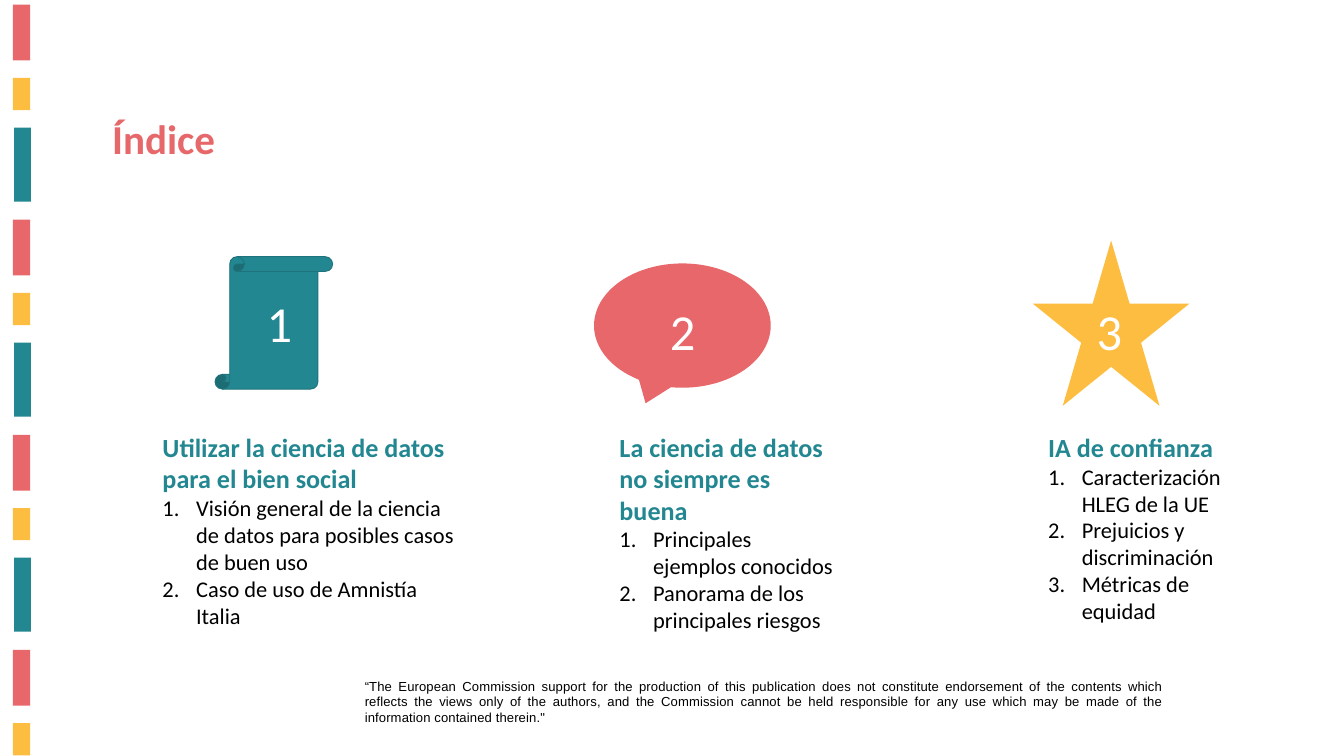
from dataclasses import dataclass

from lxml import etree
from pptx import Presentation
from pptx import util as u
from pptx.dml.color import RGBColor
from pptx.enum import shapes, text
from pptx.oxml.ns import qn

PX = u.Inches(1) // 100  # 100 px to the inch
HUES = {
    "red": "E8676A",
    "title": "E7686A",
    "gold": "FDBD40",
    "teal": "238791",
    "edge": "1E737C",
    "white": "FFFFFF",
    "black": "000000",
}
NOTE = (
    "“The European Commission support for the production of this publication "
    "does not constitute endorsement of the contents which reflects the views "
    "only of the authors, and the Commission cannot be held responsible for any "
    "use which may be made of the information contained therein.\""
)


@dataclass(frozen=True)
class Box:
    left: int
    top: int
    width: int
    height: int

    def emu(self) -> list[int]:
        return [n * PX for n in (self.left, self.top, self.width, self.height)]


@dataclass(frozen=True)
class Stripe:
    box: Box
    hue: str


@dataclass(frozen=True)
class Topic:
    label: str
    kind: shapes.MSO_SHAPE
    hue: str
    edge: str | None
    icon: Box
    digit: Box
    body: Box
    head: str
    items: tuple[str, ...]


STEP = 320
BAND = (
    Stripe(Box(19, 7, 26, 83), "red"),
    Stripe(Box(19, 116, 26, 48), "gold"),
    Stripe(Box(21, 190, 25, 110), "teal"),
)
TOPICS = (
    Topic(
        "1", shapes.MSO_SHAPE.VERTICAL_SCROLL, "teal", "edge",
        Box(320, 382, 175, 197), Box(387, 430, 158, 101), Box(232, 637, 467, 306),
        "Utilizar la ciencia de datos para el bien social",
        (
            "Visión general de la ciencia de datos para posibles casos de buen uso",
            "Caso de uso de Amnistía Italia",
        ),
    ),
    Topic(
        "2", shapes.MSO_SHAPE.OVAL_CALLOUT, "red", None,
        Box(884, 392, 263, 185), Box(987, 441, 108, 101), Box(912, 637, 338, 313),
        "La ciencia de datos no siempre es buena",
        ("Principales ejemplos conocidos", "Panorama de los principales riesgos"),
    ),
    Topic(
        "3", shapes.MSO_SHAPE.STAR_5_POINT, "gold", None,
        Box(1537, 358, 233, 246), Box(1622, 441, 150, 101), Box(1550, 637, 317, 300),
        "IA de confianza",
        (
            "Caracterización HLEG de la UE",
            "Prejuicios y discriminación",
            "Métricas de equidad",
        ),
    ),
)


def tint(name: str) -> RGBColor:
    return RGBColor.from_string(HUES[name])


def add_run(para, words: str, size: int, hue: str, bold=False, face="Calibri"):
    run = para.add_run()
    run.text = words
    font = run.font
    font.size, font.name, font.bold = u.Pt(size), face, bold
    font.color.rgb = tint(hue)
    return run


def add_text(slide, box: Box):
    frame = slide.shapes.add_textbox(*box.emu()).text_frame
    frame.word_wrap = True
    return frame


def add_form(slide, kind, box: Box, hue: str, edge: str | None = None) -> None:
    form = slide.shapes.add_shape(kind, *box.emu())
    form.shadow.inherit = False
    form.fill.solid()
    form.fill.fore_color.rgb = tint(hue)
    if edge:
        form.line.color.rgb = tint(edge)
        form.line.width = u.Pt(1)
    else:
        form.line.fill.background()


def number(para) -> None:
    """Give the paragraph a hanging automatic number."""
    props = para._p.get_or_add_pPr()
    props.set("marL", str(50 * PX))
    props.set("indent", str(-50 * PX))
    etree.SubElement(props, qn("a:buFont"), typeface="+mj-lt")
    etree.SubElement(props, qn("a:buAutoNum"), type="arabicPeriod")


def add_band(slide, high: int) -> None:
    """Repeat the stripes down the left edge while they fit."""
    for top in range(0, high, STEP):
        for part in BAND:
            box = part.box
            place = Box(box.left, box.top + top, box.width, box.height)
            if place.top + place.height <= high:
                add_form(slide, shapes.MSO_SHAPE.RECTANGLE, place, part.hue)


def add_title(slide) -> None:
    title = slide.shapes.title
    title.left, title.top, title.width, title.height = Box(157, 164, 677, 84).emu()
    frame = title.text_frame
    frame.auto_size = text.MSO_AUTO_SIZE.NONE
    frame.vertical_anchor = text.MSO_ANCHOR.TOP
    para = frame.paragraphs[0]
    para.alignment = text.PP_ALIGN.LEFT
    add_run(para, "Índice", 44, "title", bold=True)


def add_note(slide) -> None:
    para = add_text(slide, Box(533, 1004, 1208, 81)).paragraphs[0]
    para.alignment = text.PP_ALIGN.JUSTIFY
    run = add_run(para, NOTE, 14, "black", face="Arial")
    run._r.get_or_add_rPr().set("spc", "10")


def add_topic(slide, topic: Topic) -> None:
    add_form(slide, topic.kind, topic.icon, topic.hue, topic.edge)
    add_run(add_text(slide, topic.digit).paragraphs[0], topic.label, 54, "white")
    frame = add_text(slide, topic.body)
    add_run(frame.paragraphs[0], topic.head, 28, "teal", bold=True)
    for item in topic.items:
        para = frame.add_paragraph()
        number(para)
        add_run(para, item, 24, "black")


def main() -> None:
    deck = Presentation()
    deck.slide_width, deck.slide_height = 2000 * PX, 1125 * PX
    slide = deck.slides.add_slide(deck.slide_layouts[5])
    add_band(slide, 1125)
    add_note(slide)
    add_title(slide)
    for topic in TOPICS:
        add_topic(slide, topic)
    deck.save("out.pptx")


if __name__ == "__main__":
    main()
